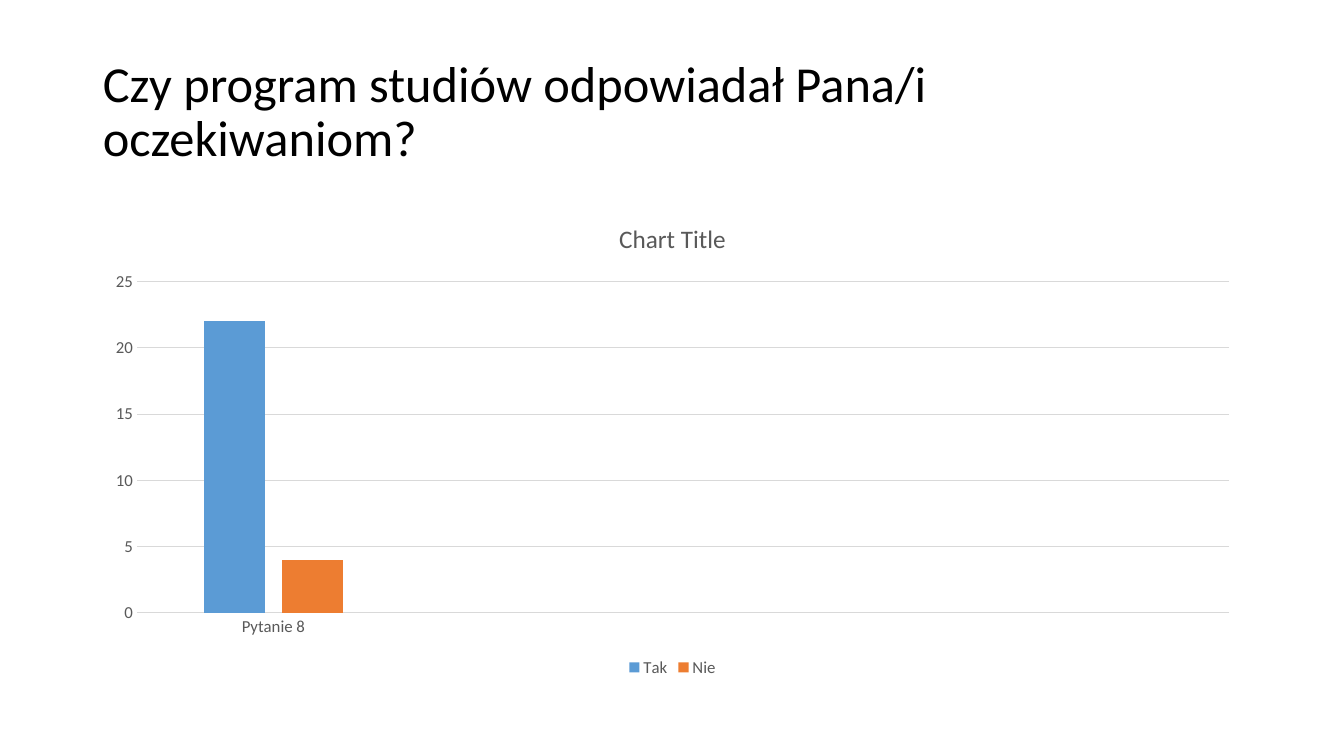
from dataclasses import dataclass

from pptx import Presentation
from pptx.chart.data import CategoryChartData
from pptx.dml.color import RGBColor
from pptx.enum.chart import XL_CHART_TYPE, XL_LEGEND_POSITION, XL_TICK_MARK
from pptx.enum.text import MSO_ANCHOR, MSO_AUTO_SIZE, PP_ALIGN
from pptx.util import Inches, Pt

COLUMNS = XL_CHART_TYPE.COLUMN_CLUSTERED
LEGEND_BOTTOM = XL_LEGEND_POSITION.BOTTOM
NO_TICK = XL_TICK_MARK.NONE
MIDDLE = MSO_ANCHOR.MIDDLE
NO_FIT = MSO_AUTO_SIZE.NONE
LEFT = PP_ALIGN.LEFT
TITLE_ONLY = 5


@dataclass(frozen=True)
class Theme:
    """Colours, font and type sizes of the deck."""

    font: str = "Calibri"
    background: str = "FFFFFF"
    title: str = "000000"
    label: str = "595959"
    grid: str = "D9D9D9"
    bars: tuple = ("5B9BD5", "ED7D31")
    title_size: int = 36
    chart_title_size: int = 18
    label_size: int = 12
    line_width: float = 0.75


THEME = Theme()


def style_font(font, size, color):
    """Apply the theme font with a size and colour."""
    font.name = THEME.font
    font.size = Pt(size)
    font.bold = False
    font.color.rgb = RGBColor.from_string(color)


def style_line(line):
    """Draw a chart line in the grid colour."""
    line.color.rgb = RGBColor.from_string(THEME.grid)
    line.width = Pt(THEME.line_width)


def place_title(page, box, text):
    """Move the title placeholder into the box and format its text."""
    title = page.shapes.title
    title.left, title.top, title.width, title.height = box
    frame = title.text_frame
    frame.text = text
    frame.word_wrap = True
    frame.auto_size = NO_FIT
    frame.vertical_anchor = MIDDLE
    para = frame.paragraphs[0]
    para.alignment = LEFT
    para.line_spacing = 0.9
    style_font(para.runs[0].font, THEME.title_size, THEME.title)


def style_axes(chart):
    """Format the category axis, value axis and gridlines."""
    for axis in (chart.category_axis, chart.value_axis):
        axis.major_tick_mark = NO_TICK
        axis.minor_tick_mark = NO_TICK
        style_font(axis.tick_labels.font, THEME.label_size, THEME.label)
    style_line(chart.category_axis.format.line)
    values = chart.value_axis
    values.format.line.fill.background()
    values.minimum_scale, values.maximum_scale = 0, 25
    values.major_unit = 5
    values.has_major_gridlines = True
    style_line(values.major_gridlines.format.line)


def place_chart(page, box, heading, categories, answers):
    """Fill the box with a column chart of the answers."""
    data = CategoryChartData()
    data.categories = categories
    for name, counts in answers.items():
        data.add_series(name, counts)
    chart = page.shapes.add_chart(COLUMNS, *box, data).chart
    style_font(chart.font, THEME.label_size, THEME.label)

    chart.has_title = True
    frame = chart.chart_title.text_frame
    frame.text = heading
    style_font(frame.paragraphs[0].runs[0].font, THEME.chart_title_size, THEME.label)
    chart.chart_title.include_in_layout = False

    chart.has_legend = True
    chart.legend.position = LEGEND_BOTTOM
    chart.legend.include_in_layout = False
    style_font(chart.legend.font, THEME.label_size, THEME.label)

    plot = chart.plots[0]
    plot.vary_by_categories = False
    plot.gap_width = 219
    plot.overlap = -27
    for series, color in zip(plot.series, THEME.bars):
        series.format.fill.solid()
        series.format.fill.fore_color.rgb = RGBColor.from_string(color)
    style_axes(chart)


def build_question_page(deck):
    """Add the page with one survey question and its answers."""
    page = deck.slides.add_slide(deck.slide_layouts[TITLE_ONLY])
    page.background.fill.solid()
    page.background.fill.fore_color.rgb = RGBColor.from_string(THEME.background)
    left, width = Inches(0.92), Inches(11.5)
    place_title(
        page,
        (left, Inches(0.4), width, Inches(1.45)),
        "Czy program studiów odpowiadał Pana/i oczekiwaniom?",
    )
    place_chart(
        page,
        (left, Inches(2), width, Inches(4.76)),
        "Chart Title",
        ["Pytanie 8", "", "", ""],
        {"Tak": (22, None, None, None), "Nie": (4, None, None, None)},
    )


def main():
    """Build and save the deck."""
    deck = Presentation()
    deck.slide_width, deck.slide_height = Inches(13.33), Inches(7.5)
    build_question_page(deck)
    deck.save("out.pptx")


if __name__ == "__main__":
    main()
